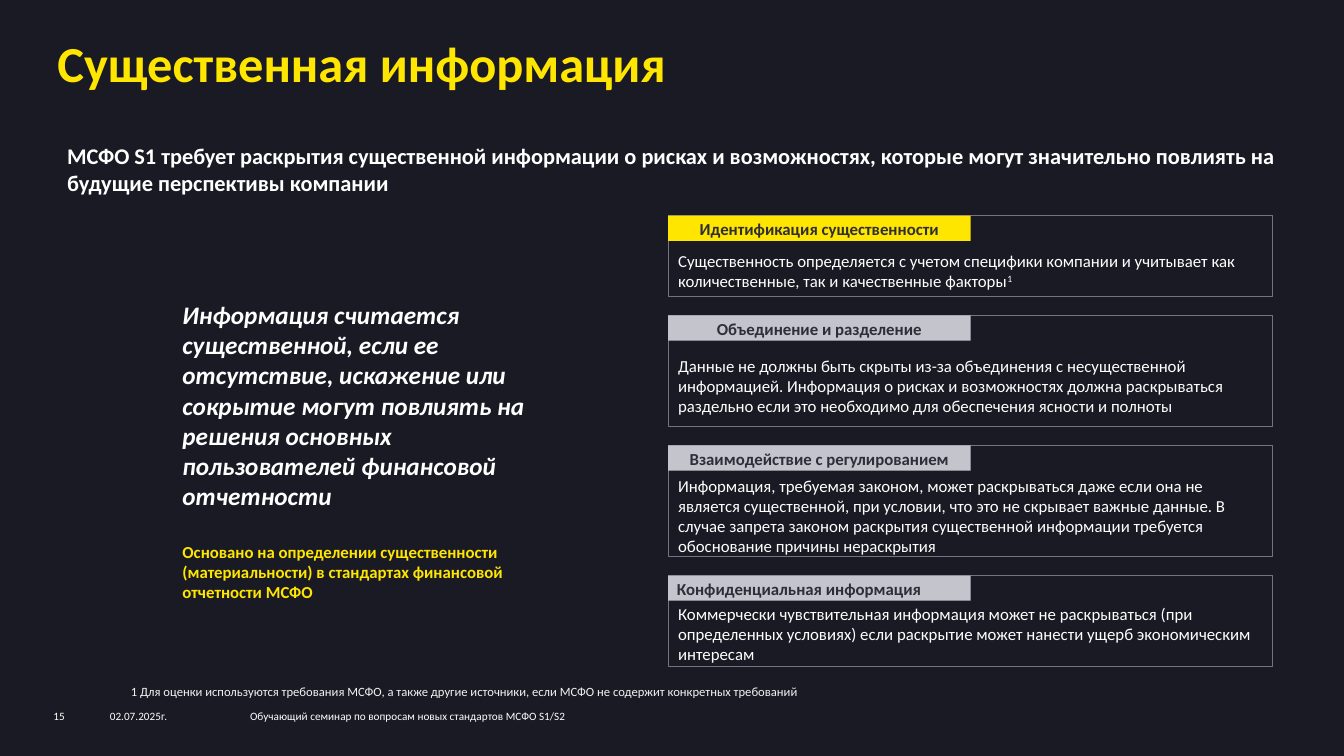
"""Build the slide on material information under IFRS S1."""
import pptx
import pptx.dml.color
import pptx.enum.shapes
import pptx.enum.text
import pptx.util

Pt = pptx.util.Pt
ALIGN = pptx.enum.text.PP_ALIGN
ANCHOR = pptx.enum.text.MSO_ANCHOR
RECTANGLE = pptx.enum.shapes.MSO_SHAPE.RECTANGLE

YELLOW, WHITE, GREY, DARK = "FFE600", "FFFFFF", "C4C4CD", "2E2E38"


def color(value):
    return pptx.dml.color.RGBColor.from_string(value)


def write_text(shape, text, size=12, fill=WHITE, bold=False, italic=False,
               align=ALIGN.LEFT, anchor=ANCHOR.TOP, margins=(0, 0, 0, 0),
               line_spacing=None, space_before=None, append=False):
    frame = shape.text_frame
    frame.word_wrap = True
    frame.auto_size = pptx.enum.text.MSO_AUTO_SIZE.NONE
    frame.vertical_anchor = anchor
    (frame.margin_left, frame.margin_top,
     frame.margin_right, frame.margin_bottom) = [Pt(margin) for margin in margins]
    paragraph = frame.add_paragraph() if append else frame.paragraphs[0]
    paragraph.alignment = align
    if line_spacing:
        paragraph.line_spacing = line_spacing
    if space_before:
        paragraph.space_before = Pt(space_before)
    run = paragraph.add_run()
    run.text = text
    font = run.font
    font.name, font.size = "Calibri", Pt(size)
    font.bold, font.italic = bold, italic
    font.color.rgb = color(fill)
    return paragraph


presentation = pptx.Presentation()
presentation.slide_width, presentation.slide_height = Pt(960), Pt(540)
slide = presentation.slides.add_slide(presentation.slide_layouts[5])
slide.background.fill.solid()
slide.background.fill.fore_color.rgb = color("1A1A24")

title = slide.shapes.title
title.left, title.top, title.width, title.height = Pt(41), Pt(29.5), Pt(864), Pt(46.8)
write_text(title, "Существенная информация", size=36, fill=YELLOW, bold=True,
           line_spacing=0.85)

text_boxes = [
    (48, 101.5, 864, 39,
     "МСФО S1 требует раскрытия существенной информации о рисках и возможностях, "
     "которые могут значительно повлиять на будущие перспективы компании",
     dict(size=16, bold=True)),
    (86.4, 484.6, 568, 18,
     "1 Для оценки используются требования МСФО, а также другие источники, "
     "если МСФО не содержит конкретных требований",
     dict(size=9, fill="F2F2F2", margins=(7.2, 3.6, 7.2, 3.6))),
    (38.2, 507, 40, 9.4, "15", dict(size=8)),
    (78.5, 507, 100, 9.4, "02.07.2025г.", dict(size=8)),
    (178.6, 507, 301, 9.4,
     "Обучающий семинар по вопросам новых стандартов МСФО S1/S2", dict(size=8)),
]
for left, top, width, height, text, text_format in text_boxes:
    box = slide.shapes.add_textbox(Pt(left), Pt(top), Pt(width), Pt(height))
    write_text(box, text, **text_format)

definition = slide.shapes.add_textbox(Pt(130.3), Pt(213.8), Pt(264.2), Pt(218))
write_text(definition,
           "Информация считается существенной, если ее отсутствие, искажение или "
           "сокрытие могут повлиять на решения основных пользователей финансовой "
           "отчетности", size=18, bold=True, italic=True)
write_text(definition,
           "Основано на определении существенности (материальности) в стандартах "
           "финансовой отчетности МСФО", fill=YELLOW, bold=True, space_before=22,
           append=True)

cards = [
    ("Идентификация существенности", 57.6, YELLOW, ALIGN.CENTER, 0, 7.2,
     "Существенность определяется с учетом специфики компании и учитывает как "
     "количественные, так и качественные факторы", "1"),
    ("Объединение и разделение", 79.2, GREY, ALIGN.CENTER, 0, 7.2,
     "Данные не должны быть скрыты из-за объединения с несущественной информацией. "
     "Информация о рисках и возможностях должна раскрываться раздельно если это "
     "необходимо для обеспечения ясности и полноты", ""),
    ("Взаимодействие с регулированием", 79.2, GREY, ALIGN.CENTER, 0, 7.2,
     "Информация, требуемая законом, может раскрываться даже если она не является "
     "существенной, при условии, что это не скрывает важные данные. В случае запрета "
     "законом раскрытия существенной информации требуется обоснование причины "
     "нераскрытия", ""),
    ("Конфиденциальная информация", 64.8, GREY, ALIGN.LEFT, 6.2, 10.8,
     "Коммерчески чувствительная информация может не раскрываться (при определенных "
     "условиях) если раскрытие может нанести ущерб экономическим интересам", ""),
]
card_left, card_top, card_gap = 477.3, 154, 13.7
for heading, height, fill, align, indent, bottom, text, note in cards:
    card = slide.shapes.add_shape(RECTANGLE, Pt(card_left), Pt(card_top), Pt(432), Pt(height))
    card.shadow.inherit = False
    card.fill.background()
    card.line.color.rgb = color("747480")
    card.line.width = Pt(0.75)
    paragraph = write_text(card, text, anchor=ANCHOR.MIDDLE,
                           margins=(7.2, 28.8, 3.6, bottom))
    if note:
        note_run = paragraph.add_run()
        note_run.text = note
        note_run.font.name, note_run.font.size = "Calibri", Pt(12)
        note_run.font.color.rgb = color(WHITE)
        note_run.font._element.set("baseline", "30000")

    label = slide.shapes.add_shape(RECTANGLE, Pt(card_left), Pt(card_top), Pt(216), Pt(18))
    label.shadow.inherit = False
    label.fill.solid()
    label.fill.fore_color.rgb = color(fill)
    label.line.fill.background()
    write_text(label, heading, fill=DARK, bold=True, align=align,
               anchor=ANCHOR.MIDDLE, margins=(indent, 0, 0, 0), line_spacing=1.1)
    card_top += height + card_gap

presentation.save("out.pptx")
